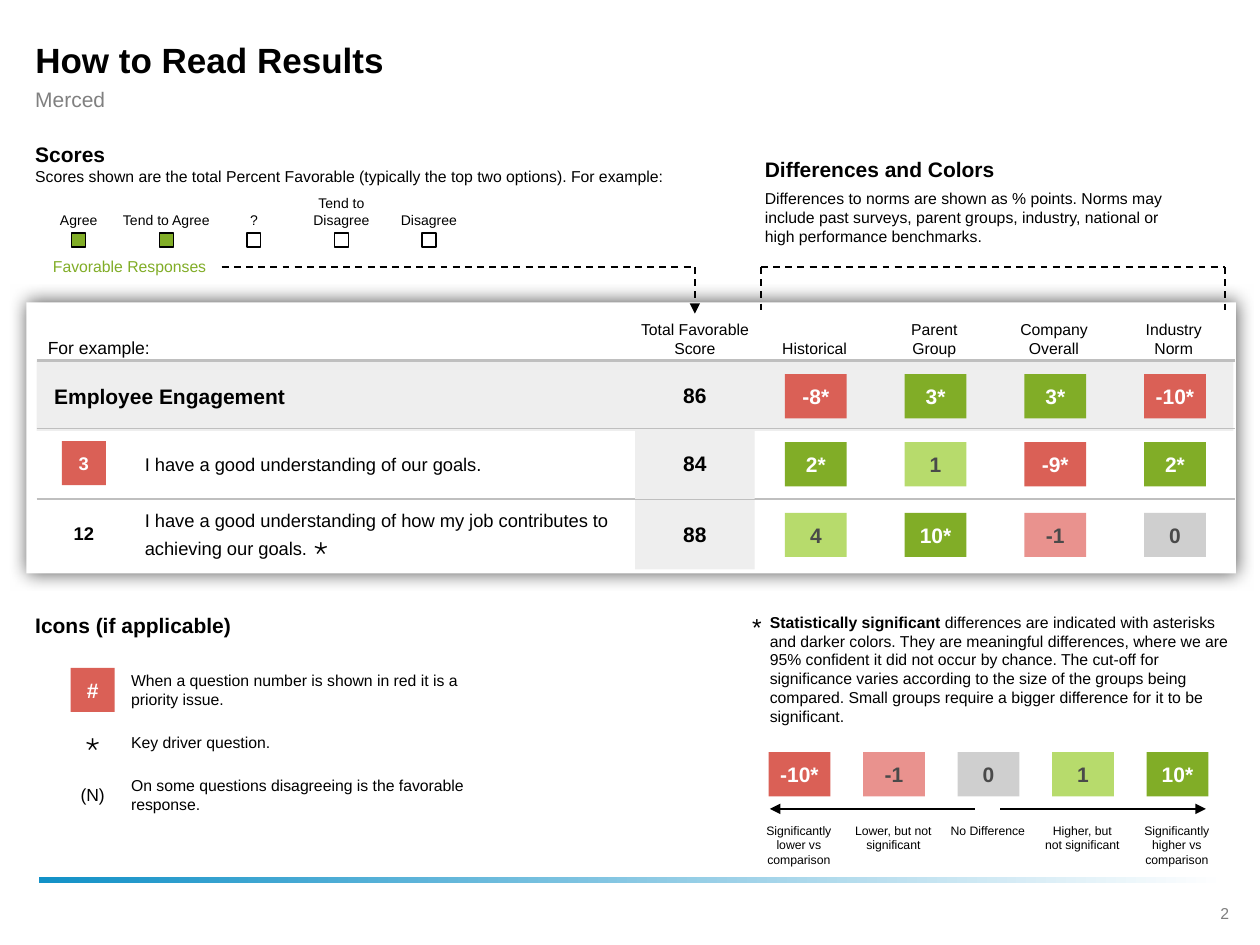
from dataclasses import dataclass

from lxml import etree
from pptx import Presentation
from pptx.dml import color as dml
from pptx.enum import dml as lines, shapes, text
from pptx.oxml import ns
from pptx.util import Inches, Pt

BLACK, WHITE, GRAY, PANEL = "000000", "FFFFFF", "BFBFBF", "EEEEEE"
RED, PINK, NEUTRAL, LIME, GREEN = "DA6056", "E9928E", "CFCFCF", "B7DB6C", "81AD27"
LEFT, CENTER = text.PP_ALIGN.LEFT, text.PP_ALIGN.CENTER
TOP, MIDDLE, BOTTOM = (
    text.MSO_ANCHOR.TOP, text.MSO_ANCHOR.MIDDLE, text.MSO_ANCHOR.BOTTOM)
COLUMN = 0.95
SCORE_X = 5.04


@dataclass(frozen=True)
class Style:
    size: float = 9
    color: str = BLACK
    bold: bool = False
    align: int = LEFT
    anchor: int = TOP
    margin_right: float = 0
    margin_y: float = 0
    wrap: bool = True


@dataclass(frozen=True)
class Row:
    top: float
    number: str
    question: str
    score: str
    differences: tuple


@dataclass(frozen=True)
class Icon:
    mark: str
    mark_top: float
    mark_height: float
    style: Style
    meaning: str
    top: float


HEADING = Style(12, bold=True)
BODY = Style()
BODY_MIDDLE = Style(anchor=MIDDLE)
OPTION = Style(8, align=CENTER, anchor=BOTTOM)
COLUMN_HEAD = Style(align=CENTER, anchor=BOTTOM)
SCORE = Style(12, bold=True, align=CENTER, anchor=MIDDLE)
STAR = Style(14, align=CENTER, anchor=MIDDLE)
KEY = Style(7, align=CENTER)

OPTIONS = [("Agree", GREEN), ("Tend to Agree", GREEN), ("?", WHITE),
           ("Tend to Disagree", WHITE), ("Disagree", WHITE)]
NORMS = [("Historical", 0.95), ("Parent Group", 0.67),
         ("Company Overall", 0.67), ("Industry Norm", 0.67)]
ROWS = [
    Row(2.86, "", "Employee Engagement", "86", ("-8*", "3*", "3*", "-10*")),
    Row(3.4, "3", "I have a good understanding of our goals.", "84",
        ("2*", "1", "-9*", "2*")),
    Row(3.96, "12", "I have a good understanding of how my job contributes to "
        "achieving our goals.", "88", ("4", "10*", "-1", "0")),
]
ICONS = [
    Icon("#", 5.38, 0.19, Style(12, WHITE, True, CENTER, MIDDLE),
         "When a question number is shown in red it is a priority issue.", 5.26),
    Icon("⋆", 5.76, 0.26, STAR, "Key driver question.", 5.68),
    Icon("(N)", 6.23, 0.16, Style(10, align=CENTER, anchor=MIDDLE),
         "On some questions disagreeing is the favorable response.", 6.1),
]
LEGEND = [("-10*", "Significantly lower vs comparison"),
          ("-1", "Lower, but not significant"), ("0", "No Difference"),
          ("1", "Higher, but not significant"),
          ("10*", "Significantly higher vs comparison")]


def rgb(value: str):
    return dml.RGBColor.from_string(value)


def add_run(p, content: str, style: Style, **changes):
    r = p.add_run()
    r.text = content
    font = dict(name="Arial", size=Pt(style.size), bold=style.bold) | changes
    for name, value in font.items():
        setattr(r.font, name, value)
    r.font.color.rgb = rgb(style.color)


def write(sp, content: str, style: Style):
    tf = sp.text_frame
    frame = dict(margin_left=0, margin_right=Inches(style.margin_right),
                 margin_top=Inches(style.margin_y),
                 margin_bottom=Inches(style.margin_y),
                 word_wrap=style.wrap, vertical_anchor=style.anchor,
                 auto_size=text.MSO_AUTO_SIZE.NONE)
    for name, value in frame.items():
        setattr(tf, name, value)
    p = tf.paragraphs[0]
    p.alignment = style.align
    add_run(p, content, style)
    return p


def add_label(s, x: float, y: float, w: float, h: float, content: str, style: Style):
    sp = s.shapes.add_textbox(*map(Inches, (x, y, w, h)))
    write(sp, content, style)
    return sp


def add_box(s, x: float, y: float, w: float, h: float, fill: str, outline: str = ""):
    sp = s.shapes.add_shape(shapes.MSO_SHAPE.RECTANGLE, *map(Inches, (x, y, w, h)))
    sp.shadow.inherit = False
    sp.fill.solid()
    sp.fill.fore_color.rgb = rgb(fill)
    if outline:
        sp.line.color.rgb = rgb(outline)
        sp.line.width = Pt(0)
    else:
        sp.line.fill.background()
    return sp


def add_line(s, start: tuple, end: tuple, color: str = BLACK, width: float = 1,
             dashed: bool = False, arrow: str = ""):
    sp = s.shapes.add_connector(
        shapes.MSO_CONNECTOR.STRAIGHT, *map(Inches, start + end))
    sp.line.color.rgb = rgb(color)
    sp.line.width = Pt(width)
    if dashed:
        sp.line.dash_style = lines.MSO_LINE.DASH
    if arrow:
        etree.SubElement(sp.line._get_or_add_ln(), ns.qn(f"a:{arrow}"), type="triangle")
    etree.SubElement(sp._element.spPr, ns.qn("a:effectLst"))
    return sp


def add_glow(sp):
    effects = sp._element.spPr.find(ns.qn("a:effectLst"))
    shadow = etree.SubElement(effects, ns.qn("a:outerShdw"), blurRad=str(Pt(10)),
                              dist="0", dir="0", algn="ctr", rotWithShape="0")
    tint = etree.SubElement(shadow, ns.qn("a:srgbClr"), val=BLACK)
    etree.SubElement(tint, ns.qn("a:alpha"), val="66000")


def add_badge(s, x: float, y: float, value: str):
    significant = value.endswith("*")
    number = int(value.rstrip("*"))
    if number == 0:
        fill = NEUTRAL
    elif number > 0:
        fill = GREEN if significant else LIME
    else:
        fill = RED if significant else PINK
    sp = add_box(s, x, y, 0.49, 0.35, fill)
    write(sp, value, Style(12, WHITE if significant else "4A4A4A", True, CENTER,
                           MIDDLE, margin_y=0.05, wrap=False))


def add_header(s):
    title = s.shapes.title
    place = dict(left=0.28, top=0.28, width=9.44, height=0.38)
    for name, value in place.items():
        setattr(title, name, Inches(value))
    write(title, "How to Read Results",
          Style(20, bold=True, anchor=MIDDLE, margin_right=0.35))
    add_label(s, 0.28, 0.68, 9.44, 0.21, "Merced",
              Style(12, "808080", anchor=MIDDLE, margin_right=0.35))


def add_footer(s):
    bar = add_box(s, 0.31, 6.96, 9.42, 0.05, WHITE)
    bar.fill.gradient()
    bar.fill.gradient_angle = 0
    for stop, color in zip(bar.fill.gradient_stops, ("1291C7", WHITE)):
        stop.color.rgb = rgb(color)
    add_label(s, 9.46, 7.12, 0.52, 0.25, "2",
              Style(9, "7F7F7F", align=CENTER, anchor=MIDDLE))


def add_scores(s):
    add_label(s, 0.28, 1.12, 5.44, 0.19, "Scores", HEADING)
    add_label(s, 0.28, 1.32, 5.44, 0.14, "Scores shown are the total Percent Favorable "
              "(typically the top two options). For example:", BODY)
    for i, (name, fill) in enumerate(OPTIONS):
        x = 0.28 + i * 0.695
        add_label(s, x, 1.53, 0.69, 0.28, name, OPTION)
        add_box(s, x + 0.29, 1.85, 0.11, 0.11, fill, BLACK)
    add_label(s, 0.42, 2.04, 1.25, 0.19, "Favorable Responses", Style(9, GREEN))


def add_differences(s):
    add_label(s, 6.07, 1.24, 3.51, 0.19, "Differences and Colors", HEADING)
    add_label(s, 6.07, 1.5, 3.3, 0.42, "Differences to norms are shown as % points. "
              "Norms may include past surveys, parent groups, industry, national or "
              "high performance benchmarks.", BODY)
    add_line(s, (6.04, 2.12), (9.72, 2.12), dashed=True)
    for x in (6.04, 9.72):
        add_line(s, (x, 2.12), (x, 2.47), dashed=True)


def add_example(s):
    add_glow(add_box(s, 0.21, 2.4, 9.6, 2.15, WHITE))
    add_label(s, 0.38, 2.49, 4.75, 0.35, "For example:", Style(10, anchor=BOTTOM))
    total = add_label(s, SCORE_X, 2.49, COLUMN, 0.35, "Total Favorable Score", COLUMN_HEAD)
    for i, (name, width) in enumerate(NORMS, 1):
        x = SCORE_X + i * COLUMN + (COLUMN - width) / 2
        add_label(s, x, 2.49, width, 0.35, name, COLUMN_HEAD)
    middle = SCORE_X + COLUMN / 2
    add_line(s, (1.76, 2.12), (middle, 2.12), dashed=True)
    drop = add_line(s, (middle, 2.12), (middle, 2.49), dashed=True, arrow="tailEnd")
    drop.end_connect(total, 0)
    for row in reversed(ROWS):
        add_row(s, row)


def add_row(s, row: Row):
    y = row.top
    add_box(s, SCORE_X, y, COLUMN, 0.56, PANEL)
    if row.number:
        priority = row.number == "3"
        if priority:
            add_box(s, 0.49, y + 0.1, 0.35, 0.35, RED)
        add_label(s, 0.49, y + 0.19, 0.35, 0.17, row.number,
                  Style(10.5, WHITE if priority else BLACK, True, CENTER, MIDDLE))
        style = Style(10.5, anchor=MIDDLE)
        sp = add_label(s, 1.15, y + 0.04, 3.8, 0.49, row.question, style)
        if row.number == "12":
            add_run(sp.text_frame.paragraphs[0], " ⋆", style, size=Pt(14))
    else:
        add_box(s, 0.29, y, 9.5, 0.56, PANEL)
        add_label(s, 0.43, y + 0.04, 4.61, 0.49, row.question,
                  Style(12, bold=True, anchor=MIDDLE))
    add_line(s, (0.29, y), (9.8, y), GRAY, 0.75 if row.number else 1.5)
    if not row.number:
        add_line(s, (0.29, ROWS[1].top), (9.8, ROWS[1].top), GRAY, 0.75)
    add_label(s, SCORE_X, y + 0.18, COLUMN, 0.19, row.score, SCORE)
    for i, value in enumerate(row.differences, 1):
        add_badge(s, SCORE_X + i * COLUMN + 0.24, y + 0.11, value)


def add_icons(s):
    add_label(s, 0.28, 4.86, 5.44, 0.19, "Icons (if applicable)", HEADING)
    add_box(s, 0.56, 5.3, 0.35, 0.35, RED)
    for icon in ICONS:
        add_label(s, 0.56, icon.mark_top, 0.35, icon.mark_height, icon.mark, icon.style)
        add_label(s, 1.04, icon.top, 2.78, 0.42, icon.meaning, BODY_MIDDLE)


def add_legend(s):
    add_label(s, 5.97, 4.86, 0.08, 0.22, "*", Style(14))
    sp = add_label(s, 6.11, 4.86, 3.66, 0.97, "Statistically significant", Style(bold=True))
    add_run(sp.text_frame.paragraphs[0], " differences are indicated with asterisks and "
            "darker colors. They are meaningful differences, where we are 95% confident it "
            "did not occur by chance. The cut-off for significance varies according to the "
            "size of the groups being compared. Small groups require a bigger difference "
            "for it to be significant.", BODY)
    for i, (value, meaning) in enumerate(LEGEND):
        x = 6.1 + i * 0.75
        add_badge(s, x, 5.97, value)
        add_label(s, x - 0.07, 6.53, 0.62, 0.35, meaning, KEY)
    add_line(s, (6.11, 6.42), (7.74, 6.42), arrow="headEnd")
    add_line(s, (7.94, 6.42), (9.57, 6.42), arrow="tailEnd")


def main():
    prs = Presentation()
    prs.slide_width, prs.slide_height = Inches(10), Inches(7.5)
    s = prs.slides.add_slide(prs.slide_layouts[5])
    for draw in (add_footer, add_header, add_scores, add_example, add_differences,
                 add_icons, add_legend):
        draw(s)
    prs.save("out.pptx")


if __name__ == "__main__":
    main()
